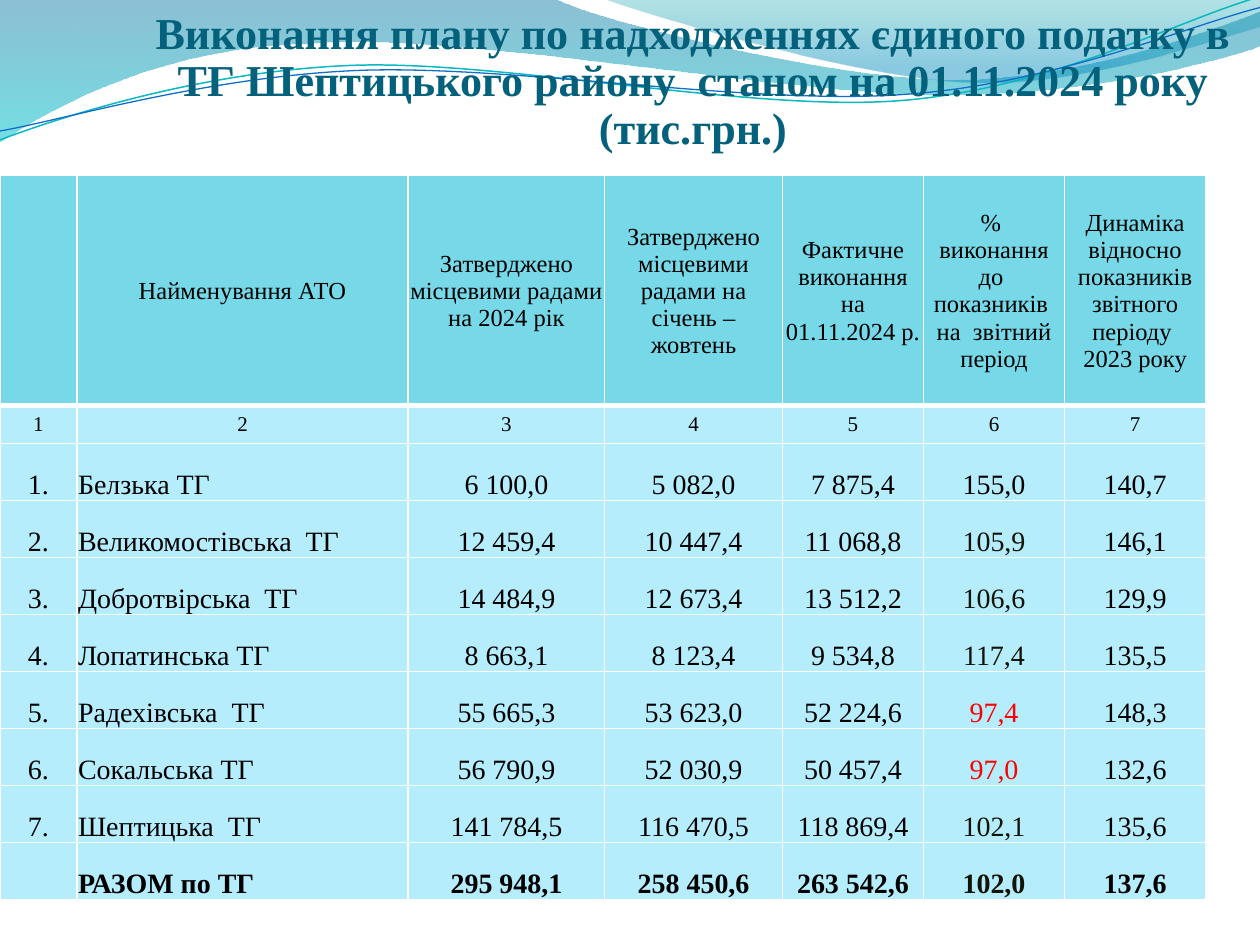
from dataclasses import astuple, dataclass, field
from math import cos, radians, sin
from typing import NamedTuple, Optional

from lxml.etree import SubElement
from pptx import Presentation
from pptx.dml.color import RGBColor
from pptx.enum.text import MSO_ANCHOR, PP_ALIGN
from pptx.oxml.ns import qn
from pptx.util import Inches, Pt


@dataclass(frozen=True)
class Theme:
    font: str = "Times New Roman"
    title_color: str = "04617B"
    text_color: str = "000000"
    percent_color: str = "111407"
    shortfall_color: str = "FF0000"
    header_fill: str = "77D9E8"
    body_fill: str = "B5EDFD"
    border_color: str = "FFFFFF"
    title_size: float = 25.2
    header_size: float = 14
    number_size: float = 12
    body_size: float = 16


THEME = Theme()


class GradientStop(NamedTuple):
    position: float
    color: str
    opacity: int


@dataclass(frozen=True)
class Wave:
    start: tuple[float, float]
    segments: list[tuple[float, ...]]
    gradient: tuple[GradientStop, ...] = ()
    line_color: str = ""
    line_width: float = 0
    tilt: float = 0
    center: tuple[float, float] = (0, 0)


@dataclass(frozen=True)
class CommunityRow:
    number: str
    name: str
    annual_plan: str
    period_plan: str
    actual: str
    percent: str
    dynamics: str
    percent_color: str = field(default=THEME.percent_color, kw_only=True)
    bold: bool = field(default=False, kw_only=True)


WAVES = [
    Wave(
        (0, 0),
        [(4.4, -0.01), (4.76, 0.17, 6.64, 0.63, 7.58, 0.63), (8.53, 0.63, 9.58, 0.26, 10, 0.09),
         (10.01, 0.36), (9.83, 0.44, 8.7, 0.76, 7.46, 0.75), (6.22, 0.75, 3.82, 0.28, 2.57, 0.34),
         (1.29, 0.36, 0.46, 0.83, -0.01, 1.13), (0, 0)],
        gradient=(GradientStop(0, "0074A1", 45), GradientStop(1, "00C6CF", 55)),
    ),
    Wave(
        (4.79, -0.01),
        [(5.09, 0.11, 6.82, 0.62, 7.69, 0.65), (8.56, 0.69, 9.61, 0.32, 10, 0.21), (10, 0),
         (4.79, -0.01)],
        gradient=(GradientStop(0, "00A1A9", 30), GradientStop(0.8, "008BBF", 45)),
    ),
    Wave(
        (0, 1.11),
        [(0.48, 0.93, 1.58, 0.57, 2.77, 0.52), (3.95, 0.47, 5.93, 0.89, 7.13, 0.8),
         (8.33, 0.71, 9.38, 0.15, 9.98, -0.02)],
        line_color="0AB8BF", line_width=0.85, tilt=-2.7, center=(4.99, 0.57),
    ),
    Wave(
        (0, 1.04),
        [(0.47, 0.96, 1.64, 0.61, 2.83, 0.56), (4.03, 0.51, 5.97, 0.84, 7.17, 0.75),
         (8.36, 0.67, 9.41, 0.21, 10, 0.06)],
        line_color="0F6FC6", line_width=0.75, tilt=-2.7, center=(5, 0.59),
    ),
]

TITLE = ("Виконання плану по надходженнях єдиного податку в ТГ Шептицького району  "
         "станом на 01.11.2024 року (тис.грн.)")
HEADERS = [
    "",
    "Найменування АТО",
    "Затверджено місцевими радами на 2024 рік",
    "Затверджено місцевими радами на січень – жовтень",
    "Фактичне виконання на 01.11.2024 р. ",
    "% \nвиконання до  показників  на  звітний період",
    "Динаміка відносно показників звітного періоду  2023 року",
]
ROWS = [
    CommunityRow("1.", "Белзька ТГ", "6 100,0", "5 082,0", "7 875,4", "155,0", "140,7",
                 percent_color=THEME.text_color),
    CommunityRow("2.", "Великомостівська  ТГ", "12 459,4", "10 447,4", "11 068,8", "105,9", "146,1"),
    CommunityRow("3.", "Добротвірська  ТГ", "14 484,9", "12 673,4", "13 512,2", "106,6", "129,9"),
    CommunityRow("4.", "Лопатинська ТГ", "8 663,1", "8 123,4", "9 534,8", "117,4", "135,5"),
    CommunityRow("5.", "Радехівська  ТГ", "55 665,3", "53 623,0", "52 224,6", "97,4", "148,3",
                 percent_color=THEME.shortfall_color),
    CommunityRow("6.", "Сокальська ТГ", "56 790,9", "52 030,9", "50 457,4", "97,0", "132,6",
                 percent_color=THEME.shortfall_color),
    CommunityRow("7.", "Шептицька  ТГ", "141 784,5", "116 470,5", "118 869,4", "102,1", "135,6"),
    CommunityRow("", "РАЗОМ по ТГ", "295 948,1", "258 450,6", "263 542,6", "102,0", "137,6", bold=True),
]
COLUMN_WIDTHS = [0.61, 2.63, 1.56, 1.41, 1.12, 1.12, 1.12]
TABLE_HEIGHT, HEADER_HEIGHT, NUMBER_HEIGHT = 5.75, 1.83, 0.3
BODY_HEIGHT = (TABLE_HEIGHT - HEADER_HEIGHT - NUMBER_HEIGHT) / len(ROWS)
ROW_HEIGHTS = [HEADER_HEIGHT, NUMBER_HEIGHT] + [BODY_HEIGHT] * len(ROWS)
NAME_COLUMN, PERCENT_COLUMN = 1, 5


def write_text(text_frame, text: str, *, size: float, color: str = THEME.text_color,
               bold: bool = False, align: PP_ALIGN = PP_ALIGN.CENTER,
               line_spacing: Optional[float] = None) -> None:
    text_frame.text = text
    text_frame.word_wrap = True
    for paragraph in text_frame.paragraphs:
        paragraph.alignment = align
        paragraph.line_spacing = line_spacing
        for run in paragraph.runs:
            run.font.name = THEME.font
            run.font.size = Pt(size)
            run.font.bold = bold
            run.font.color.rgb = RGBColor.from_string(color)


def level_points(wave: Wave, values: tuple[float, ...]) -> list[tuple[int, int]]:
    angle, (center_x, center_y) = radians(-wave.tilt), wave.center
    points = []
    for x, y in zip(values[::2], values[1::2]):
        across, down = x - center_x, y - center_y
        points.append((Inches(center_x + across * cos(angle) - down * sin(angle)),
                       Inches(center_y + across * sin(angle) + down * cos(angle))))
    return points


def draw_wave(slide, wave: Wave):
    segments = [level_points(wave, values) for values in (wave.start, *wave.segments)]
    start, *anchors = [points[-1] for points in segments]
    builder = slide.shapes.build_freeform(*start)
    builder.add_line_segments(anchors, close=bool(wave.gradient))
    shape = builder.convert_to_shape()
    outline = next(shape.element.iter(qn("a:path")))
    for command, points in zip(list(outline)[1:], segments[1:]):
        if len(points) == 3:
            curve = SubElement(outline, qn("a:cubicBezTo"))
            for x, y in points:
                SubElement(curve, qn("a:pt"), x=str(x - shape.left), y=str(y - shape.top))
            outline.replace(command, curve)
    shape.rotation = wave.tilt
    shape.shadow.inherit = False
    if not wave.gradient:
        shape.fill.background()
        shape.line.color.rgb = RGBColor.from_string(wave.line_color)
        shape.line.width = Pt(wave.line_width)
        return shape
    shape.line.fill.background()
    shape.fill.gradient()
    shape.fill.gradient_angle = 270
    for stop, values in zip(shape.fill.gradient_stops, wave.gradient):
        stop.position = values.position
        stop.color.rgb = RGBColor.from_string(values.color)
    for color, values in zip(shape.element.spPr.iter(qn("a:srgbClr")), wave.gradient):
        SubElement(color, qn("a:alpha"), val=str(values.opacity * 1000))
    return shape


def format_cell(cell, *, fill: str, anchor: MSO_ANCHOR, tight: bool = True,
                top_border: float = 1, bottom_border: float = 1) -> None:
    properties = cell._tc.get_or_add_tcPr()
    for side, width in (("L", 1), ("R", 1), ("T", top_border), ("B", bottom_border)):
        border = SubElement(properties, qn(f"a:ln{side}"), w=str(Pt(width)))
        solid = SubElement(border, qn("a:solidFill"))
        SubElement(solid, qn("a:srgbClr"), val=THEME.border_color)
    cell.fill.solid()
    cell.fill.fore_color.rgb = RGBColor.from_string(fill)
    cell.vertical_anchor = anchor
    if tight:
        cell.margin_left = cell.margin_right = cell.margin_top = Inches(0.01)
        cell.margin_bottom = 0


def draw_table(slide) -> None:
    table = slide.shapes.add_table(
        len(ROW_HEIGHTS), len(COLUMN_WIDTHS), 0, Inches(1.39),
        Inches(sum(COLUMN_WIDTHS)), Inches(TABLE_HEIGHT)).table
    table.horz_banding = False
    for column, width in zip(table.columns, COLUMN_WIDTHS):
        column.width = Inches(width)
    for row, height in zip(table.rows, ROW_HEIGHTS):
        row.height = Inches(height)
    for index, header in enumerate(HEADERS):
        cell = table.cell(0, index)
        format_cell(cell, fill=THEME.header_fill, anchor=MSO_ANCHOR.MIDDLE, bottom_border=3)
        write_text(cell.text_frame, header, size=THEME.header_size)
        cell = table.cell(1, index)
        format_cell(cell, fill=THEME.body_fill, anchor=MSO_ANCHOR.MIDDLE, tight=False, top_border=3)
        write_text(cell.text_frame, str(index + 1), size=THEME.number_size)
    for row_index, community in enumerate(ROWS, start=2):
        for index, text in enumerate(astuple(community)[:len(COLUMN_WIDTHS)]):
            cell = table.cell(row_index, index)
            format_cell(cell, fill=THEME.body_fill, anchor=MSO_ANCHOR.BOTTOM)
            write_text(cell.text_frame, text, size=THEME.body_size, bold=community.bold,
                       color=community.percent_color if index == PERCENT_COLUMN else THEME.text_color,
                       align=PP_ALIGN.LEFT if index == NAME_COLUMN else PP_ALIGN.CENTER)


def main() -> None:
    presentation = Presentation()
    presentation.slide_width, presentation.slide_height = Inches(10), Inches(7.5)
    slide = presentation.slides.add_slide(presentation.slide_layouts[5])
    for position, wave in enumerate(WAVES, start=2):
        presentation.slide_master.shapes.element.insert(position, draw_wave(slide, wave).element)
    title = slide.shapes.title
    title.left, title.top, title.width, title.height = Inches(1), 0, Inches(9), Inches(1.31)
    title.text_frame.vertical_anchor = MSO_ANCHOR.MIDDLE
    write_text(title.text_frame, TITLE, size=THEME.title_size, color=THEME.title_color,
               bold=True, line_spacing=0.9)
    draw_table(slide)
    presentation.save("out.pptx")


if __name__ == "__main__":
    main()
